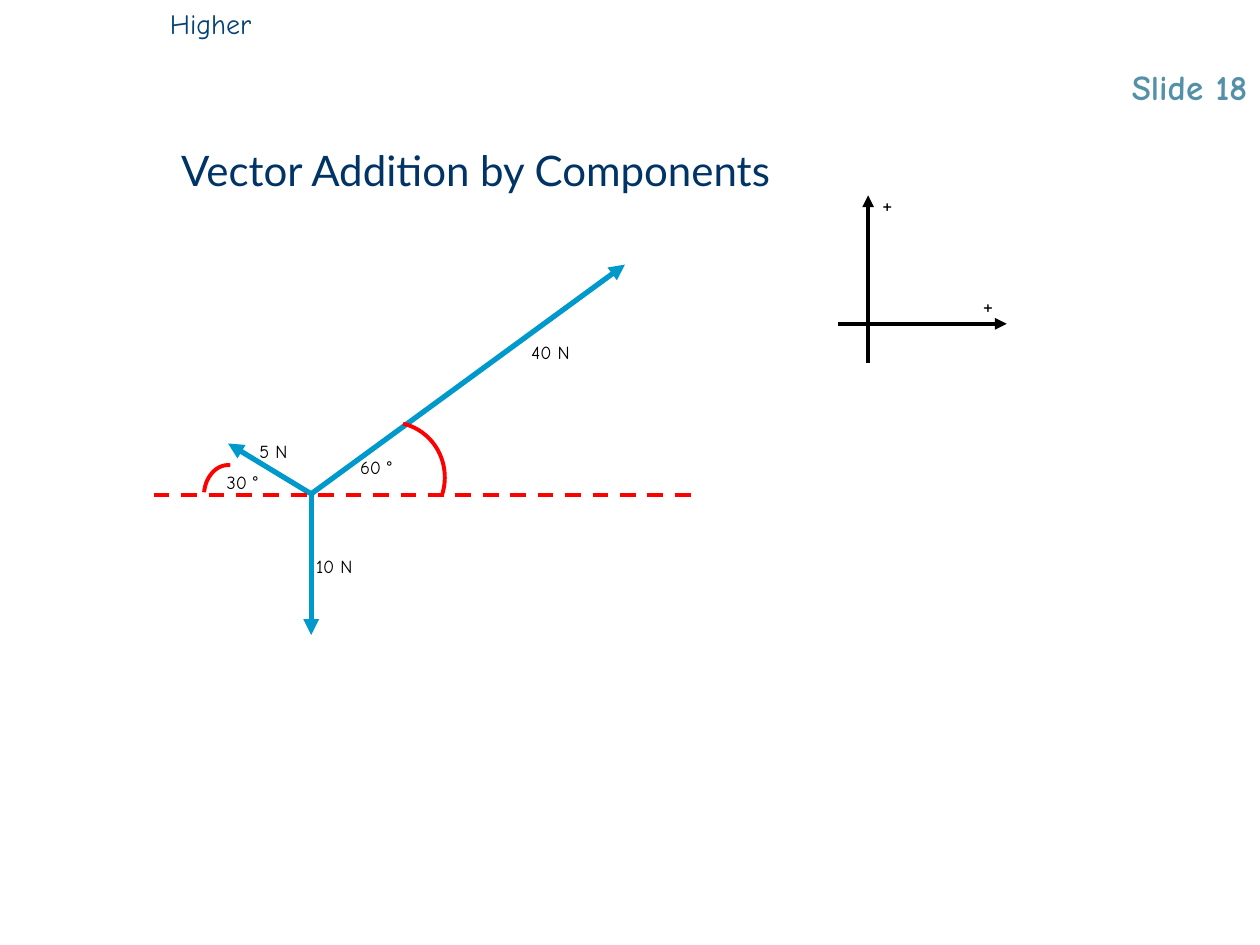
from dataclasses import dataclass

from pptx import Presentation
from pptx.dml.color import RGBColor
from pptx.enum.dml import MSO_LINE
from pptx.enum.shapes import MSO_CONNECTOR, MSO_SHAPE
from pptx.enum.text import MSO_ANCHOR, MSO_AUTO_SIZE, PP_ALIGN
from pptx.oxml.ns import qn
from pptx.util import Inches, Pt
from lxml.etree import SubElement


@dataclass(frozen=True)
class Theme:
    body_font: str = "Comic Neue"
    title_font: str = "Lato"
    number: str = "5490A8"
    level: str = "034176"
    title: str = "003366"
    force: str = "0099CC"
    angle: str = "FF0000"
    ink: str = "000000"
    title_size: float = 24
    number_size: float = 20
    level_size: float = 16
    sign_size: float = 14
    label_size: float = 10.5
    force_width: float = 3
    thin_width: float = 2.25


class Board:
    """Draws on one slide with a grid of 100 columns by 75 rows."""

    COLS, ROWS = 100, 75

    def __init__(self, prs, theme):
        self.theme = theme
        self.col = prs.slide_width / self.COLS
        self.row = prs.slide_height / self.ROWS
        self.s = prs.slides.add_slide(prs.slide_layouts[6])

    def place(self, x, y):
        return round(x * self.col), round(y * self.row)

    def text(self, words, box, size, color, font=None, bold=False, wrap=True,
             align=PP_ALIGN.LEFT, anchor=MSO_ANCHOR.TOP):
        x, y, w, h = box
        sp = self.s.shapes.add_textbox(*self.place(x, y), *self.place(w, h))
        tf = sp.text_frame
        tf.word_wrap = wrap
        tf.auto_size = MSO_AUTO_SIZE.NONE
        tf.vertical_anchor = anchor
        p = tf.paragraphs[0]
        p.alignment = align
        r = p.add_run()
        r.text = words
        r.font.name = font or self.theme.body_font
        r.font.size = Pt(size)
        r.font.bold = bold
        r.font.color.rgb = RGBColor.from_string(color)

    def label(self, words, x, y, w):
        self.text(words, (x, y, w, 2.8), self.theme.label_size,
                  self.theme.ink, wrap=False)

    def sign(self, x, y):
        self.text("+", (x, y, 3, 3.4), self.theme.sign_size,
                  self.theme.ink, wrap=False)

    def stroke(self, sp, color, width):
        sp.line.color.rgb = RGBColor.from_string(color)
        sp.line.width = Pt(width)

    def line(self, start, end, color, width, arrow=True, dashed=False):
        c = self.s.shapes.add_connector(
            MSO_CONNECTOR.STRAIGHT, *self.place(*start), *self.place(*end))
        self.stroke(c, color, width)
        if dashed:
            c.line.dash_style = MSO_LINE.DASH
        if arrow:
            SubElement(c.line._get_or_add_ln(), qn("a:tailEnd"), type="triangle")
        SubElement(c._element.spPr, qn("a:effectLst"))

    def arc(self, box, turn):
        x, y, w, h = box
        sp = self.s.shapes.add_shape(
            MSO_SHAPE.ARC, *self.place(x, y), *self.place(w, h))
        sp.adjustments[0] = 158.71
        sp.adjustments[1] = 0
        sp.rotation = turn
        sp.shadow.inherit = False
        sp.fill.background()
        self.stroke(sp, self.theme.angle, self.theme.thin_width)


def main():
    prs = Presentation()
    prs.slide_width, prs.slide_height = Inches(10), Inches(7.5)
    t = Theme()
    b = Board(prs, t)

    # Headings
    b.text("Slide 18", (16.7, 1.7, 83.3, 7.3), t.number_size, t.number,
           bold=True, align=PP_ALIGN.RIGHT, anchor=MSO_ANCHOR.BOTTOM)
    b.text("Higher", (12.5, 0, 35.8, 3.7), t.level_size, t.level)
    b.text("Vector Addition by Components", (13.4, 10.7, 78.6, 5.5),
           t.title_size, t.title, font=t.title_font, anchor=MSO_ANCHOR.MIDDLE)

    # Forces from a common point
    origin = (24.7, 39.2)
    for tip in ((49.6, 21), (18.1, 35.2), (24.7, 50.4)):
        b.line(origin, tip, t.force, t.force_width)

    # Horizontal reference and angles
    b.line((12.2, 39.3), (55.5, 39.3), t.angle, t.thin_width,
           arrow=False, dashed=True)
    b.arc((26.6, 33.5, 8.7, 8.9), 19.1)
    b.arc((15.7, 37.4, 4.5, 3.5), 278.3)

    # Force and angle labels
    for words, x, y, w in (("40 N", 41.2, 26.6, 5.4), ("10 N", 24.1, 43.6, 5.2),
                           ("5 N", 19.6, 34.4, 4.5), ("60 °", 27.6, 35.7, 4.8),
                           ("30 °", 17, 36.9, 4.8)):
        b.label(words, x, y, w)

    # Positive directions
    for start, end in (((68.9, 28.8), (68.9, 15.5)), ((66.5, 25.7), (79.9, 25.7))):
        b.line(start, end, t.ink, t.thin_width)
    for x, y in ((69, 14.5), (77, 22.5)):
        b.sign(x, y)

    prs.save("out.pptx")


if __name__ == "__main__":
    main()
